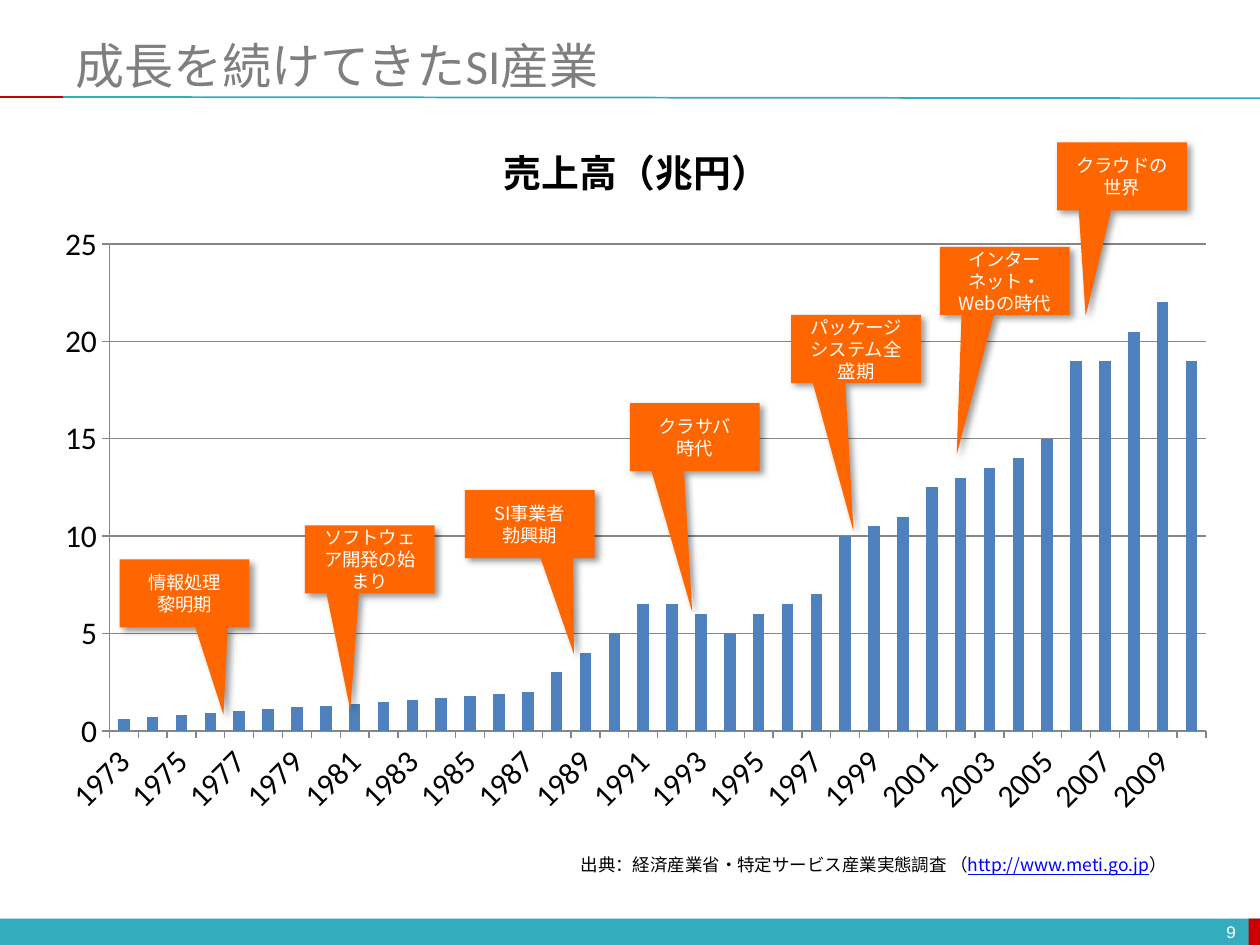
from lxml import etree
from pptx import Presentation
from pptx.chart.data import CategoryChartData
from pptx.dml.color import RGBColor
from pptx.enum import chart as chart_enum, shapes, text
from pptx.oxml import parse_xml
from pptx.oxml.ns import nsdecls, qn
from pptx.util import Inches, Pt

TEAL, RED, ORANGE, BLUE = "33ACBD", "CC0000", "FF6600", "4F81BD"
JAPANESE = "Noto Sans CJK JP"


def color(value):
    return RGBColor.from_string(value)


def add_run(paragraph, words, size, font_name, font_color):
    run = paragraph.add_run()
    run.text = words
    run.font.size = Pt(size)
    run.font.name = font_name
    run.font.color.rgb = color(font_color)
    east_asian = etree.SubElement(run._r.get_or_add_rPr(), qn("a:ea"))
    east_asian.set("typeface", JAPANESE)
    return run


presentation = Presentation()
presentation.slide_width, presentation.slide_height = Inches(10), Inches(7.5)
slide = presentation.slides.add_slide(presentation.slide_layouts[5])

# Footer bar and title rule
for left, width, fill in [(0, 10, TEAL), (9.91, 0.09, RED)]:
    bar = slide.shapes.add_shape(shapes.MSO_SHAPE.RECTANGLE, Inches(left),
                                 Inches(7.29), Inches(width), Inches(0.21))
    bar.shadow.inherit = False
    bar.fill.solid()
    bar.fill.fore_color.rgb = color(fill)
    bar.line.fill.background()

for start, end, end_y, stroke in [(0.5, 10, 0.78, TEAL), (0, 0.5, 0.77, RED)]:
    rule = slide.shapes.add_connector(shapes.MSO_CONNECTOR.STRAIGHT, Inches(start),
                                      Inches(0.77), Inches(end), Inches(end_y))
    rule.line.color.rgb = color(stroke)
    rule.line.width = Pt(1)
    etree.SubElement(rule._element.spPr, qn("a:effectLst"))

number_box = slide.shapes.add_textbox(Inches(7.58), Inches(7.27), Inches(2.33), Inches(0.24))
number_box.text_frame.word_wrap = True
number_box.text_frame.vertical_anchor = text.MSO_ANCHOR.MIDDLE
paragraph = number_box.text_frame.paragraphs[0]
paragraph.alignment = text.PP_ALIGN.RIGHT
add_run(paragraph, "9", 10, "Courier New", "FFFFFF")

# Title
title = slide.shapes.title
title.left, title.top, title.width, title.height = map(Inches, (0.5, 0.23, 9.5, 0.46))
title.text_frame.auto_size = text.MSO_AUTO_SIZE.NONE
title.text_frame.vertical_anchor = text.MSO_ANCHOR.TOP
paragraph = title.text_frame.paragraphs[0]
paragraph.alignment = text.PP_ALIGN.LEFT
add_run(paragraph, "成長を続けてきたSI産業", 28, "Calibri", "7F7F7F")

# Source note
source_box = slide.shapes.add_textbox(Inches(4.51), Inches(6.73), Inches(5.03), Inches(0.27))
source_box.text_frame.word_wrap = True
paragraph = source_box.text_frame.paragraphs[0]
add_run(paragraph, "出典：経済産業省・特定サービス産業実態調査 （", 10, JAPANESE, "000000")
add_run(paragraph, "http://www.meti.go.jp", 10, JAPANESE, "0000FF").font.underline = True
add_run(paragraph, "）", 10, JAPANESE, "000000")

# Sales chart
sales = [0.6, 0.7, 0.8, 0.9, 1, 1.1, 1.2, 1.3, 1.4, 1.5, 1.6, 1.7, 1.8, 1.9, 2, 3, 4, 5, 6.5,
         6.5, 6, 5, 6, 6.5, 7, 10, 10.5, 11, 12.5, 13, 13.5, 14, 15, 19, 19, 20.5, 22, 19]
chart_data = CategoryChartData()
chart_data.categories = [str(1973 + index) for index in range(len(sales))]
chart_data.add_series("売上高（兆円）", sales)
chart = slide.shapes.add_chart(chart_enum.XL_CHART_TYPE.COLUMN_CLUSTERED, Inches(0.34),
                               Inches(0.88), Inches(9.43), Inches(5.71), chart_data).chart
chart.has_legend = False
chart.font.size = Pt(18)
chart.font.name = "Calibri"
chart.font.color.rgb = color("000000")
chart.has_title = True
chart.chart_title.include_in_layout = False
title_run = add_run(chart.chart_title.text_frame.paragraphs[0],
                    "売上高（兆円）", 21.6, JAPANESE, "000000")
title_run.font.bold = True

plot = chart.plots[0]
plot.gap_width = 150
plot.vary_by_categories = False
bars = plot.series[0].format.fill
bars.solid()
bars.fore_color.rgb = color(BLUE)

value_axis, category_axis = chart.value_axis, chart.category_axis
value_axis.minimum_scale, value_axis.maximum_scale, value_axis.major_unit = 0, 25, 5
value_axis.has_major_gridlines = True
for line in (value_axis.major_gridlines.format.line, value_axis.format.line,
             category_axis.format.line):
    line.color.rgb = color("868686")
    line.width = Pt(0.75)
for axis in (value_axis, category_axis):
    axis.major_tick_mark = chart_enum.XL_TICK_MARK.OUTSIDE
    axis.tick_labels.font.size = Pt(18)
category_axis._element.txPr.find(qn("a:bodyPr")).set("rot", "-2700000")
label_skip = parse_xml(f'<c:tickLblSkip {nsdecls("c")} val="2"/>')
category_axis._element.find(qn("c:noMultiLvlLbl")).addprevious(label_skip)

plot_area = chart._chartSpace.chart.plotArea
for old_layout in plot_area.findall(qn("c:layout")):
    plot_area.remove(old_layout)
plot_area.insert(0, parse_xml(
    f'<c:layout {nsdecls("c")}><c:manualLayout><c:layoutTarget val="inner"/>'
    '<c:xMode val="edge"/><c:yMode val="edge"/><c:x val="0.056"/><c:y val="0.185"/>'
    '<c:w val="0.923"/><c:h val="0.677"/></c:manualLayout></c:layout>'))

# Era callouts: left, top, pointer x and y, paragraphs
callouts = [
    (0.95, 4.44, 0.3, 1.78, ["情報処理", "黎明期"]),
    (2.42, 4.17, -0.15, 2.21, ["ソフトウェア開発の始まり"]),
    (3.69, 3.89, 0.34, 1.91, ["SI事業者", "勃興期"]),
    (5, 3.2, -0.02, 2.57, ["クラサバ", "時代"]),
    (6.28, 2.5, -0.02, 2.68, ["パッケージシステム全盛期"]),
    (7.46, 1.96, -0.37, 2.55, ["インターネット・Webの時代"]),
    (8.39, 1.13, -0.28, 2.05, ["クラウドの世界"]),
]
for left, top, pointer_x, pointer_y, lines in callouts:
    callout = slide.shapes.add_shape(shapes.MSO_SHAPE.RECTANGULAR_CALLOUT, Inches(left),
                                     Inches(top), Inches(1.03), Inches(0.54))
    callout.adjustments[0], callout.adjustments[1] = pointer_x, pointer_y
    callout.fill.solid()
    callout.fill.fore_color.rgb = color(ORANGE)
    callout.line.fill.background()
    callout._element.spPr.append(parse_xml(
        f'<a:effectLst {nsdecls("a")}><a:outerShdw blurRad="{Pt(4)}" dist="{Pt(3)}" '
        'dir="2700000" algn="tl" rotWithShape="0"><a:srgbClr val="000000">'
        '<a:alpha val="40000"/></a:srgbClr></a:outerShdw></a:effectLst>'))
    frame = callout.text_frame
    frame.word_wrap = True
    frame.vertical_anchor = text.MSO_ANCHOR.MIDDLE
    for index, words in enumerate(lines):
        paragraph = frame.add_paragraph() if index else frame.paragraphs[0]
        paragraph.alignment = text.PP_ALIGN.CENTER
        add_run(paragraph, words, 10.5, JAPANESE, "FFFFFF")

presentation.save("out.pptx")
